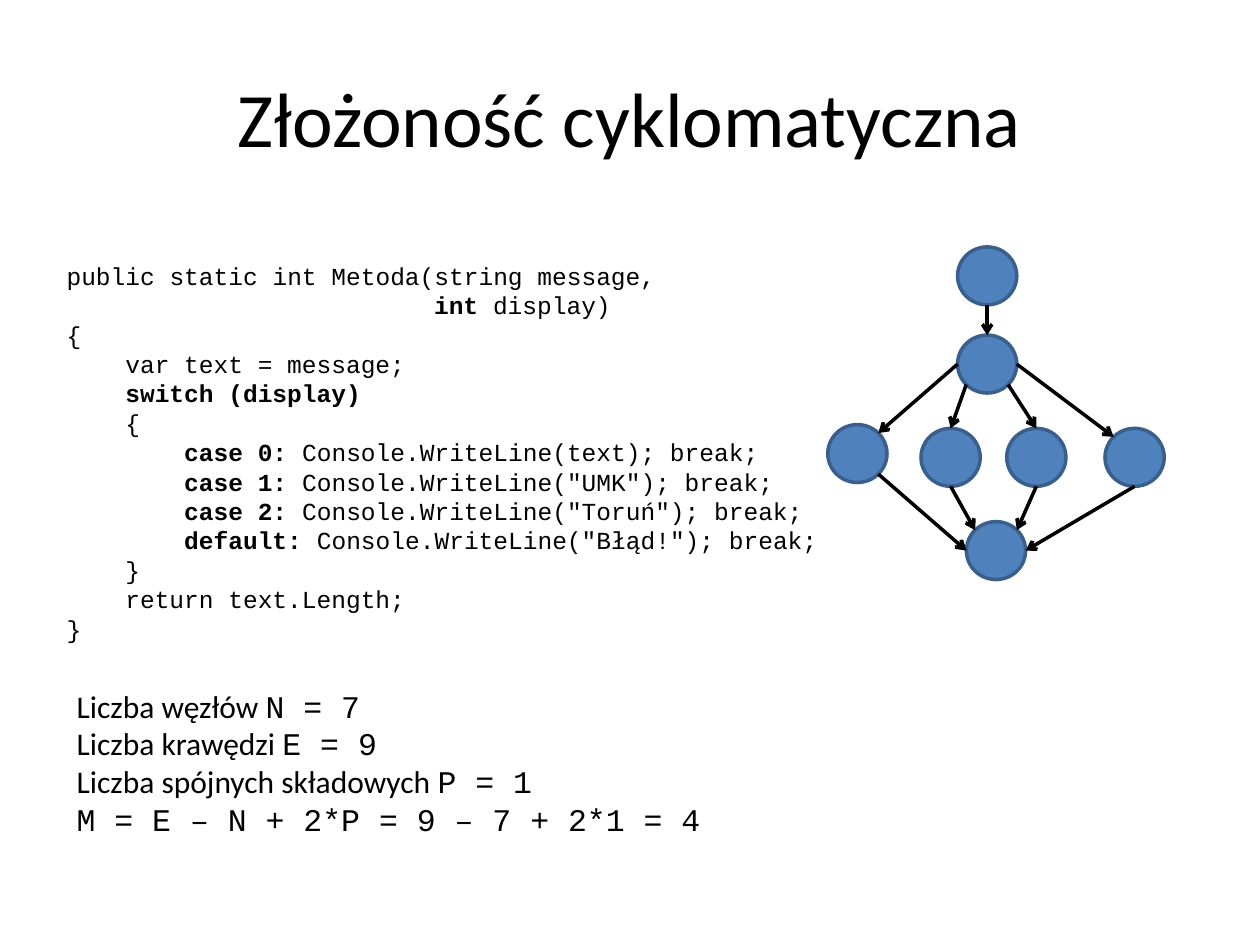
from lxml import etree
from pptx import Presentation, util as u
from pptx.dml.color import RGBColor
from pptx.enum import shapes, text
from pptx.oxml import ns

TITLE = "Złożoność cyklomatyczna"
SANS, MONO = "Calibri", "Courier New"
BLACK, BLUE, DARK_BLUE = "000000", "4F81BD", "3A5F8C"

# Code lines: indent in characters, bold part, plain parts around it
CODE = [
    (0, "public static int Metoda(string message,", "", ""),
    (25, "", "int", " display)"),
    (0, "{", "", ""),
    (4, "var text = message;", "", ""),
    (4, "", "switch (display)", ""),
    (4, "{", "", ""),
    (8, "", "case 0: ", "Console.WriteLine(text); break;"),
    (8, "", "case 1: ", 'Console.WriteLine("UMK"); break;'),
    (8, "", "case 2: ", 'Console.WriteLine("Toruń"); break;'),
    (8, "", "default: ", 'Console.WriteLine("Błąd!"); break;'),
    (4, "}", "", ""),
    (4, "return text.Length;", "", ""),
    (0, "}", "", ""),
]
# Summary lines: label, formula
SUMMARY = [
    ("Liczba węzłów ", "N = 7"),
    ("Liczba krawędzi ", "E = 9"),
    ("Liczba spójnych składowych ", "P = 1"),
    ("", "M = E – N + 2*P = 9 – 7 + 2*1 = 4"),
]
# Flow graph: left and top of each node, in inches
NODE_WIDTH, NODE_HEIGHT = 0.47, 0.46
NODES = {
    "start": (7.6, 1.96),
    "switch": (7.6, 2.66),
    "case 0": (6.57, 3.37),
    "case 1": (7.31, 3.4),
    "case 2": (7.99, 3.4),
    "default": (8.77, 3.4),
    "end": (7.67, 4.14),
}
# Edges: from node and side, to node and side
EDGES = [
    ("start", "bottom", "switch", "top"),
    ("switch", "left", "case 0", "top right"),
    ("switch", "bottom left", "case 1", "top"),
    ("switch", "bottom right", "case 2", "top"),
    ("switch", "right", "default", "top left"),
    ("case 0", "bottom right", "end", "left"),
    ("case 1", "bottom", "end", "top left"),
    ("case 2", "bottom", "end", "top right"),
    ("default", "bottom", "end", "right"),
]


def color(value):
    return RGBColor.from_string(value)


def set_format(target, values):
    for name, value in values.items():
        setattr(target, name, value)


def add_run(paragraph, words, font, size, bold=False):
    if words:
        run = paragraph.add_run()
        run.text = words
        set_format(run.font, {"name": font, "size": u.Pt(size), "bold": bold})
        run.font.color.rgb = color(BLACK)


def add_text_box(slide, box, count):
    frame = slide.shapes.add_textbox(*map(u.Inches, box)).text_frame
    frame.word_wrap = True
    return [frame.paragraphs[0]] + [frame.add_paragraph() for _ in range(count - 1)]


def rim_point(node, side):
    """Point on the node's ellipse, on one of eight sides."""
    across = ("right" in side) - ("left" in side)
    down = ("bottom" in side) - ("top" in side)
    reach = 0.5 if across * down == 0 else 0.5 * 0.5 ** 0.5
    left, top = NODES[node]
    return (u.Inches(left + NODE_WIDTH * (0.5 + across * reach)),
            u.Inches(top + NODE_HEIGHT * (0.5 + down * reach)))


def add_node(slide, left, top):
    node = slide.shapes.add_shape(shapes.MSO_SHAPE.OVAL, *map(
        u.Inches, (left, top, NODE_WIDTH, NODE_HEIGHT)))
    node.shadow.inherit = False
    node.fill.solid()
    node.fill.fore_color.rgb = color(BLUE)
    node.line.color.rgb = color(DARK_BLUE)
    node.line.width = u.Pt(2)
    return node


def add_edge(slide, nodes, start, start_side, end, end_side):
    edge = slide.shapes.add_connector(
        shapes.MSO_CONNECTOR.STRAIGHT,
        *rim_point(start, start_side), *rim_point(end, end_side))
    edge.line.color.rgb = color(BLACK)
    edge.line.width = u.Pt(2)
    if end_side == "top":
        edge.end_connect(nodes[end], 0)
    etree.SubElement(edge.line._get_or_add_ln(), ns.qn("a:tailEnd"), type="arrow")
    etree.SubElement(edge._element.spPr, ns.qn("a:effectLst"))


def main():
    presentation = Presentation()
    presentation.slide_width, presentation.slide_height = u.Inches(10), u.Inches(7.5)
    slide = presentation.slides.add_slide(presentation.slide_layouts[5])

    # Title
    title = slide.shapes.title
    set_format(title, dict(zip(("left", "top", "width", "height"),
                               map(u.Inches, (0.5, 0.3, 9, 1.25)))))
    title.text_frame.vertical_anchor = text.MSO_ANCHOR.MIDDLE
    heading = title.text_frame.paragraphs[0]
    heading.alignment = text.PP_ALIGN.CENTER
    add_run(heading, TITLE, SANS, 44)

    # Code, indented by the width of a monospaced character
    code_size = 14
    paragraphs = add_text_box(slide, (0.43, 2.02, 6.31, 3.16), len(CODE))
    for paragraph, (indent, before, bold, after) in zip(paragraphs, CODE):
        margin = u.Pt(indent * code_size * 0.6)
        paragraph._p.get_or_add_pPr().set("marL", str(margin))
        add_run(paragraph, before, MONO, code_size)
        add_run(paragraph, bold, MONO, code_size, True)
        add_run(paragraph, after, MONO, code_size)

    # Summary
    paragraphs = add_text_box(slide, (0.51, 5.4, 5.18, 1.31), len(SUMMARY))
    for paragraph, (label, formula) in zip(paragraphs, SUMMARY):
        add_run(paragraph, label, SANS, 18)
        add_run(paragraph, formula, MONO, 18)

    # Flow graph
    nodes = {name: add_node(slide, *place) for name, place in NODES.items()}
    for edge in EDGES:
        add_edge(slide, nodes, *edge)

    presentation.save("out.pptx")


if __name__ == "__main__":
    main()
